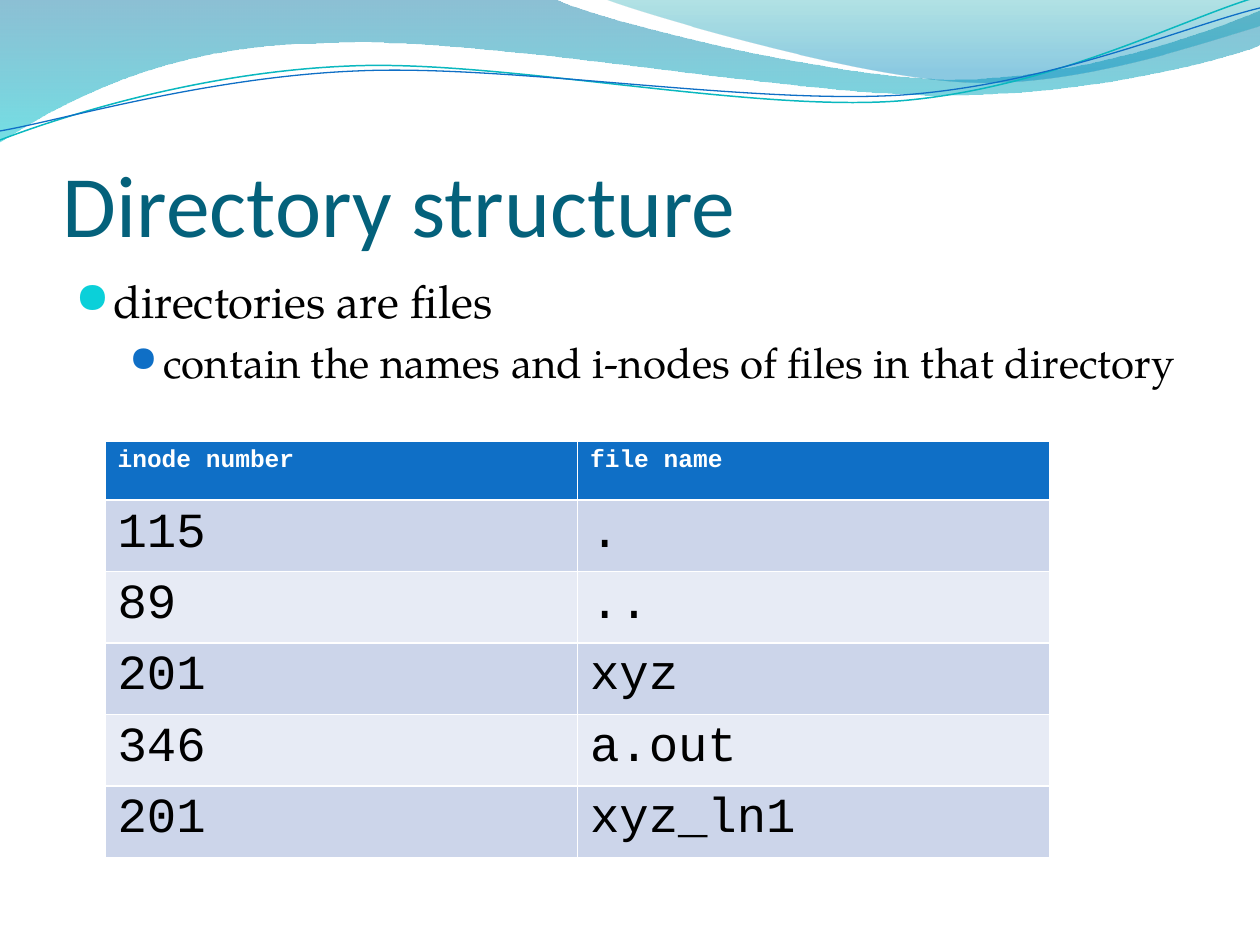
"""Build the slide on directory structure with its wave banner and inode table."""

from dataclasses import dataclass

from lxml.etree import SubElement
from pptx import Presentation
from pptx.dml.color import RGBColor
from pptx.enum.text import MSO_ANCHOR as Anchor
from pptx.oxml.ns import qn
from pptx.util import Emu, Pt

SCALE = 914400 / 126
COLORS = {
    "title": "04617B",
    "text": "000000",
    "white": "FFFFFF",
    "teal": "0AB8BF",
    "blue": "0F6FC6",
    "bullet": "0BD0D9",
    "band_dark": "CCD5EA",
    "band_light": "E7EBF5",
    "deep_sea": "0074A1",
    "lagoon": "00C6CF",
    "sea_green": "00A1A9",
    "sky": "008BBF",
}


@dataclass(frozen=True)
class Stop:
    position: float
    color: str
    opacity: int


@dataclass(frozen=True)
class Wave:
    start: tuple
    segments: tuple
    stops: tuple = ()
    line_color: str = ""
    line_width: float = 0


@dataclass(frozen=True)
class Bullet:
    text: str
    level: int
    font_size: int
    margin: int
    hanging: int
    color: str
    percent: int
    space_before: float


WAVES = (
    Wave((0, -1), (
        ((554, -1),),
        ((600, 21), (837, 79), (955, 79)),
        ((1075, 79), (1207, 33), (1260, 11)),
        ((1261, 45),),
        ((1239, 55), (1096, 96), (940, 95)),
        ((784, 95), (481, 35), (324, 43)),
        ((163, 44), (58, 105), (-1, 142)),
        ((0, -1),),
    ), stops=(Stop(0, "deep_sea", 45), Stop(1, "lagoon", 55))),
    Wave((604, -1), (
        ((641, 14), (859, 78), (969, 82)),
        ((1079, 87), (1211, 40), (1260, 26)),
        ((1260, 0),),
        ((604, -1),),
    ), stops=(Stop(0, "sea_green", 30), Stop(0.8, "sky", 45))),
    Wave((0, 140), (
        ((60, 117), (199, 72), (349, 66)),
        ((498, 59), (747, 112), (898, 101)),
        ((1050, 89), (1182, 19), (1257, -3)),
    ), line_color="teal", line_width=0.85),
    Wave((0, 131), (
        ((59, 121), (207, 77), (357, 71)),
        ((508, 64), (752, 105), (903, 95)),
        ((1053, 84), (1186, 26), (1260, 8)),
    ), line_color="blue", line_width=0.75),
)
BULLETS = (
    Bullet("directories are files", 0, 26, 38, 38, "bullet", 95, 0),
    Bullet("contain the names and i-nodes of files in that directory",
           1, 24, 88, 34, "blue", 85, 4.8),
)
ROWS = (
    ("inode number", "file name"),
    ("115", "."),
    ("89", ".."),
    ("201", "xyz"),
    ("346", "a.out"),
    ("201", "xyz_ln1"),
)


def px(length: float) -> Emu:
    return Emu(round(length * SCALE))


def rgb(name: str) -> RGBColor:
    return RGBColor.from_string(COLORS[name])


def set_font(paragraph, name: str, size: int, color: str, bold: bool = False) -> None:
    font = paragraph.font
    font.name, font.size, font.bold = name, Pt(size), bold
    font.color.rgb = rgb(color)


def bend_segments(shape, segments: tuple) -> None:
    """Join each run of three straight steps into one cubic curve."""
    steps = iter(list(shape.element.iter(qn("a:lnTo"))))
    for segment in segments:
        first, *others = [next(steps) for _ in segment]
        if others:
            first.tag = qn("a:cubicBezTo")
        for step in others:
            first.append(step[0])
            step.getparent().remove(step)


def draw_wave(slide, wave: Wave) -> None:
    points = [(px(x), px(y)) for segment in wave.segments for x, y in segment]
    builder = slide.shapes.build_freeform(*map(px, wave.start))
    builder.add_line_segments(points, close=bool(wave.stops))
    shape = builder.convert_to_shape()
    bend_segments(shape, wave.segments)
    shape.shadow.inherit = False
    if not wave.stops:
        shape.fill.background()
        shape.line.color.rgb = rgb(wave.line_color)
        shape.line.width = Pt(wave.line_width)
        return
    shape.line.fill.background()
    shape.fill.gradient()
    shape.fill.gradient_angle = 270
    for gradient_stop, stop in zip(shape.fill.gradient_stops, wave.stops):
        gradient_stop.position = stop.position
        gradient_stop.color.rgb = rgb(stop.color)
    for color, stop in zip(shape.element.spPr.iter(qn("a:srgbClr")), wave.stops):
        SubElement(color, qn("a:alpha"), val=str(stop.opacity * 1000))


def draw_title(slide, text: str) -> None:
    frame = slide.shapes.add_textbox(px(63), px(97), px(1134), px(158)).text_frame
    frame.word_wrap = True
    frame.vertical_anchor = Anchor.BOTTOM
    frame.margin_left = frame.margin_right = frame.margin_bottom = 0
    frame.text = text
    set_font(frame.paragraphs[0], "Calibri", 50, "title")


def draw_bullets(slide, bullets: tuple) -> None:
    frame = slide.shapes.add_textbox(px(63), px(267), px(1134), px(605)).text_frame
    frame.word_wrap = True
    frame.text = "\n".join(bullet.text for bullet in bullets)
    for paragraph, bullet in zip(frame.paragraphs, bullets):
        paragraph.level = bullet.level
        paragraph.space_before = Pt(bullet.space_before)
        properties = paragraph._p.get_or_add_pPr()
        properties.set("marL", str(px(bullet.margin)))
        properties.set("indent", str(-px(bullet.hanging)))
        color = SubElement(properties, qn("a:buClr"))
        SubElement(color, qn("a:srgbClr"), val=COLORS[bullet.color])
        SubElement(properties, qn("a:buSzPct"), val=str(bullet.percent * 1000))
        SubElement(properties, qn("a:buFont"), typeface="OpenSymbol")
        SubElement(properties, qn("a:buChar"), char="●")
        set_font(paragraph, "TeX Gyre Pagella", bullet.font_size, "text")


def draw_table(slide, rows: tuple) -> None:
    graphic_frame = slide.shapes.add_table(
        len(rows), 2, px(105), px(441), px(945), px(59 * len(rows)))
    graphic_frame.height = px(417)
    for row_index, row in enumerate(rows):
        header = row_index == 0
        band = "band_dark" if row_index % 2 else "band_light"
        for column_index, text in enumerate(row):
            cell = graphic_frame.table.cell(row_index, column_index)
            cell.fill.solid()
            cell.fill.fore_color.rgb = rgb("blue" if header else band)
            cell.text = text
            set_font(cell.text_frame.paragraphs[0], "Courier New",
                     14 if header else 28, "white" if header else "text", header)


def main() -> None:
    presentation = Presentation()
    presentation.slide_width, presentation.slide_height = px(1260), px(945)
    slide = presentation.slides.add_slide(presentation.slide_layouts[6])
    for wave in WAVES:
        draw_wave(slide, wave)
    draw_title(slide, "Directory structure")
    draw_bullets(slide, BULLETS)
    draw_table(slide, ROWS)
    presentation.save("out.pptx")


if __name__ == "__main__":
    main()
